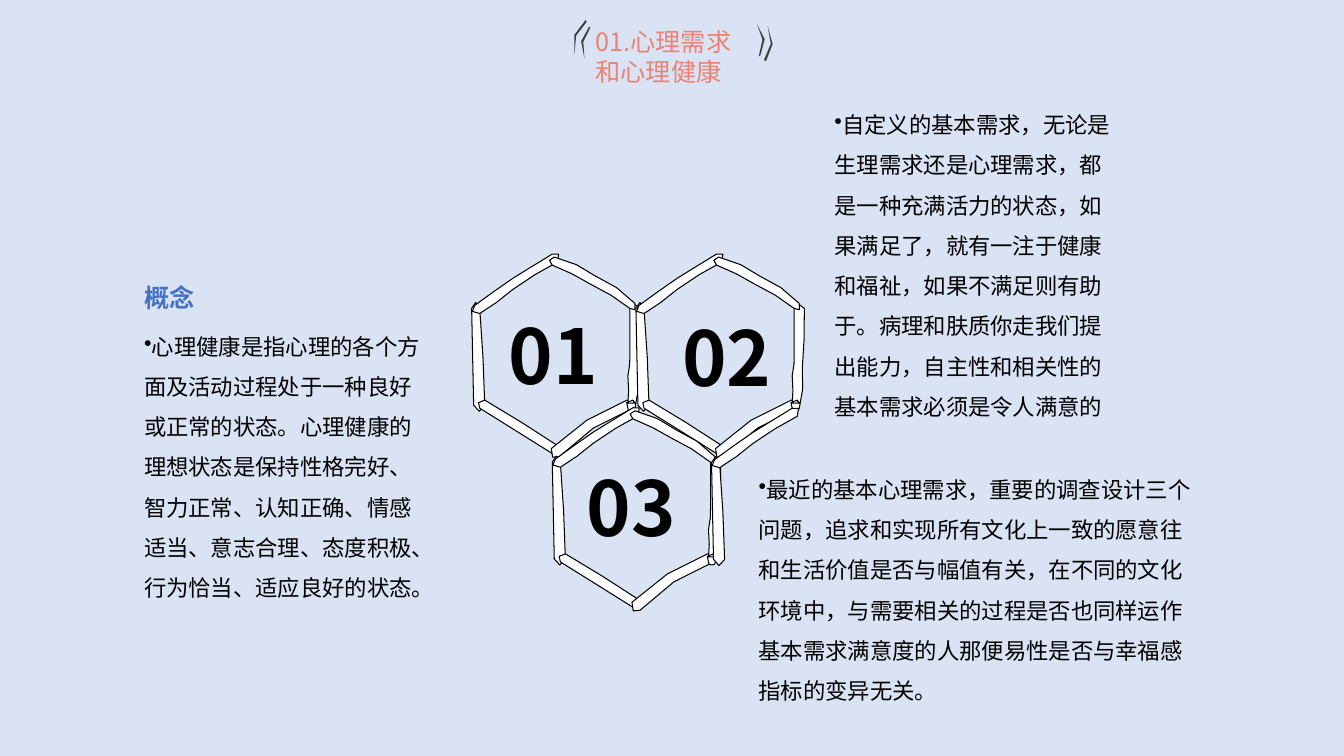
from dataclasses import dataclass
from math import cos, radians, sin

from lxml import etree
from pptx import Presentation
from pptx.dml.color import RGBColor
from pptx.enum.text import MSO_AUTO_SIZE, PP_ALIGN
from pptx.oxml.ns import qn
from pptx.util import Cm, Pt

BLACK = RGBColor(0x00, 0x00, 0x00)
WHITE = RGBColor(0xFF, 0xFF, 0xFF)
GREY = RGBColor(0x3C, 0x3C, 0x3B)
CORAL = RGBColor(0xEB, 0x83, 0x74)
BLUE = RGBColor(0x44, 0x72, 0xC4)
PALE = RGBColor(0xDA, 0xE3, 0xF3)
LEFT = PP_ALIGN.LEFT
FULL = PP_ALIGN.JUSTIFY
GROW = MSO_AUTO_SIZE.SHAPE_TO_FIT_TEXT
SANS = "Noto Sans CJK JP"
UNIT = Cm(2.54) / 100
STEPS = 2

Point = tuple[float, float]
Curve = tuple[float, ...]


@dataclass
class Mark:
    box: Curve
    turn: float
    start: Point
    curves: list[Curve]


@dataclass
class Stick:
    start: Point
    curves: list[Curve]


@dataclass
class Note:
    box: Curve
    text: str
    gap: int


@dataclass
class Label:
    box: Curve
    text: str


MARKS = [
    Mark((743, 27, 19, 26), 138.6, (755, 55), [
        (762, 46, 759, 32, 751, 25), (758, 34, 758, 45, 754, 54)]),
    Mark((748, 31, 25, 25), 138.6, (761, 60), [
        (769, 50, 770, 37, 763, 26), (768, 37, 767, 50, 759, 59)]),
    Mark((573, 29, 19, 26), 333.2, (584, 27), [
        (575, 33, 575, 48, 580, 57), (576, 46, 579, 36, 585, 28)]),
    Mark((563, 24, 25, 25), 333.2, (580, 21), [
        (570, 28, 566, 41, 570, 53), (568, 41, 572, 29, 581, 23)]),
]

WEST = Stick((468, 306), [
    (468, 338, 470, 370, 470, 402), (470, 410, 481, 410, 481, 402),
    (481, 370, 478, 338, 476, 306), (476, 298, 468, 298, 468, 306)])
LOW_WEST = Stick((476, 405), [
    (502, 418, 522, 437, 548, 450), (553, 453, 558, 445, 553, 442),
    (527, 426, 507, 411, 481, 397), (476, 395, 471, 403, 476, 405)])
LOW_EAST = Stick((555, 453), [
    (573, 429, 602, 418, 628, 405), (633, 402, 628, 391, 622, 397),
    (597, 410, 566, 421, 547, 445), (545, 451, 550, 459, 555, 453)])
EAST = Stick((623, 405), [
    (623, 405, 623, 408, 625, 408), (628, 408, 630, 408, 630, 405),
    (635, 397, 633, 376, 633, 365), (635, 347, 635, 328, 635, 306),
    (635, 301, 625, 301, 625, 306), (625, 322, 625, 336, 625, 352),
    (625, 357, 625, 365, 623, 373), (623, 379, 625, 397, 623, 400),
    (625, 400, 628, 400, 630, 400), (628, 397, 628, 397, 628, 397),
    (623, 395, 618, 403, 623, 405)])
TOP_WEST = Stick((476, 311), [
    (486, 306, 499, 295, 509, 287), (522, 276, 540, 268, 553, 260),
    (558, 255, 553, 247, 548, 252), (535, 260, 522, 268, 509, 276),
    (496, 284, 483, 295, 471, 303), (466, 306, 468, 313, 476, 311)])
TOP_EAST = Stick((548, 263), [
    (563, 266, 573, 277, 586, 282), (599, 290, 614, 295, 625, 306),
    (627, 311, 635, 306, 630, 301), (620, 287, 604, 282, 591, 274),
    (579, 266, 566, 258, 550, 255), (545, 253, 543, 263, 548, 263)])
CELL = [WEST, LOW_WEST, LOW_EAST, EAST, TOP_WEST, TOP_EAST]
COMB = [
    ((0, 0), CELL),
    ((163, 0), CELL),
    ((80, 152.5), CELL),
    ((238, 153), [WEST, TOP_WEST]),
]

NOTES = [
    Note((3.38, 7.92, 7.49, 8.46), "心理健康是指心理的各个方面及活动过程处于一种良好或正常的状态。心理健康的理想状态是保持性格完好、智力正常、认知正确、情感适当、意志合理、态度积极、行为恰当、适应良好的状态。", 0),
    Note((20.78, 2.34, 7.49, 8.46), "自定义的基本需求，无论是生理需求还是心理需求，都是一种充满活力的状态，如果满足了，就有一注于健康和福祉，如果不满足则有助于。病理和肤质你走我们提出能力，自主性和相关性的基本需求必须是令人满意的", 10),
    Note((18.87, 11.53, 11.56, 6.4), "最近的基本心理需求，重要的调查设计三个问题，追求和实现所有文化上一致的愿意往和生活价值是否与幅值有关，在不同的文化环境中，与需要相关的过程是否也同样运作基本需求满意度的人那便易性是否与幸福感指标的变异无关。", 10),
]
LABELS = [
    Label((12.57, 7.65, 2.77, 2.57), "01"),
    Label((16.94, 7.7, 2.9, 2.57), "02"),
    Label((14.53, 11.48, 3, 2.59), "03"),
]


def trace(start: Point, curves: list[Curve]) -> list[Point]:
    points = [start]
    for ax, ay, bx, by, cx, cy in curves:
        x, y = points[-1]
        for step in range(1, STEPS + 1):
            t = step / STEPS
            s = 1 - t
            k = (s ** 3, 3 * s * s * t, 3 * s * t * t, t ** 3)
            points.append((k[0] * x + k[1] * ax + k[2] * bx + k[3] * cx,
                           k[0] * y + k[1] * ay + k[2] * by + k[3] * cy))
    return points


def draw(shapes, points: list[Point], fill: RGBColor, line: RGBColor | None = None):
    first, *rest = [(x * UNIT, y * UNIT) for x, y in points]
    pen = shapes.build_freeform(*first, scale=1.0)
    pen.add_line_segments(rest, close=True)
    shape = pen.convert_to_shape()
    shape.shadow.inherit = False
    shape.fill.solid()
    shape.fill.fore_color.rgb = fill
    if line is None:
        shape.line.fill.background()
    else:
        shape.line.color.rgb = line
        shape.line.width = Pt(0.75)
    return shape


def draw_mark(shapes, mark: Mark) -> None:
    left, top, width, height = mark.box
    mid_x, mid_y = left + width / 2, top + height / 2
    c, s = cos(radians(mark.turn)), sin(radians(mark.turn))
    flat = [(mid_x + (x - mid_x) * c + (y - mid_y) * s,
             mid_y - (x - mid_x) * s + (y - mid_y) * c)
            for x, y in trace(mark.start, mark.curves)]
    shape = draw(shapes, flat, GREY)
    shape.left, shape.top, shape.width, shape.height = (round(n * UNIT) for n in mark.box)
    shape.rotation = mark.turn


def write(shapes, box: Curve, text: str, *, size: int, font: str = SANS,
          color: RGBColor = BLACK, bold: bool = False, align=LEFT,
          space: float = 1, gap: int = 0, dot: bool = False) -> None:
    frame = shapes.add_textbox(*map(Cm, box)).text_frame
    frame.word_wrap = True
    frame.auto_size = GROW
    para = frame.paragraphs[0]
    para.alignment = align
    para.line_spacing = space
    para.space_before = Pt(gap)
    run = para.add_run()
    run.text = text
    run.font.size = Pt(size)
    run.font.name = font
    run.font.bold = bold
    run.font.color.rgb = color
    etree.SubElement(run.font._element, qn("a:ea"), typeface=font)
    if dot:
        etree.SubElement(para._p.get_or_add_pPr(), qn("a:buChar"), char="•")


def main() -> None:
    deck = Presentation()
    deck.slide_width, deck.slide_height = Cm(33.87), Cm(19.05)
    slide = deck.slides.add_slide(deck.slide_layouts[6])
    slide.background.fill.solid()
    slide.background.fill.fore_color.rgb = PALE
    shapes = slide.shapes
    head = shapes.add_group_shape().shapes
    for mark in MARKS:
        draw_mark(head, mark)
    write(head, (14.76, 0.53, 4.52, 1.8), "01.心理需求和心理健康",
          size=18, font="Noto Sans CJK SC", color=CORAL)
    write(shapes, (3.38, 6.99, 6.35, 1.02), "概念", size=18, color=BLUE, bold=True)
    for note in NOTES:
        write(shapes, note.box, note.text, size=16, font="Calibri",
              space=1.5, gap=note.gap, dot=True)
    for label in LABELS:
        write(shapes, label.box, label.text, size=54, bold=True, align=FULL)
    comb = shapes.add_group_shape().shapes
    for (dx, dy), sticks in COMB:
        for stick in sticks:
            points = trace(stick.start, stick.curves)
            draw(comb, [(x + dx, y + dy) for x, y in points], WHITE, BLACK)
    deck.save("out.pptx")


if __name__ == "__main__":
    main()
